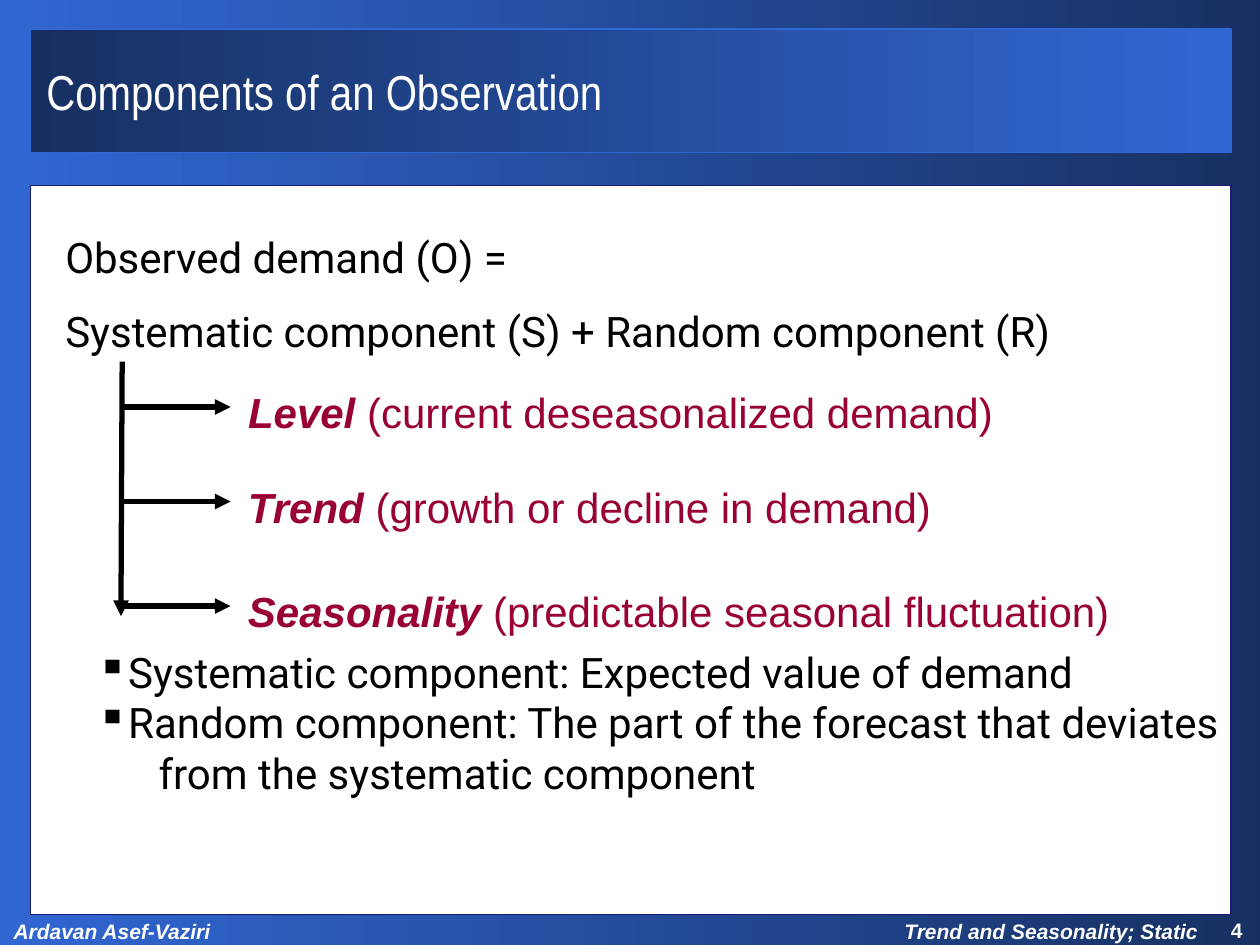
from dataclasses import dataclass

from lxml import etree
from pptx import Presentation
from pptx.dml.color import RGBColor
from pptx.enum.shapes import MSO_CONNECTOR, MSO_SHAPE
from pptx.enum.text import MSO_ANCHOR
from pptx.oxml.ns import qn
from pptx.util import Inches, Pt

RECT = MSO_SHAPE.RECTANGLE
STRAIGHT = MSO_CONNECTOR.STRAIGHT
TOP, MIDDLE = MSO_ANCHOR.TOP, MSO_ANCHOR.MIDDLE
WIDTH, HEIGHT = Inches(10), Inches(7.5)
COL, ROW = WIDTH / 100, HEIGHT / 75


@dataclass(frozen=True)
class Theme:
    """Colours, fonts and type sizes of the slide."""
    blue: str = "3167D3"
    navy: str = "173062"
    edge: str = "1A1A70"
    white: str = "FFFFFF"
    black: str = "000000"
    accent: str = "990033"
    sans: str = "Arial"
    narrow: str = "Arial Narrow"
    body: str = "Roboto"
    title_size: int = 28
    body_size: int = 24
    footer_size: int = 12


T = Theme()
TITLE = {"name": T.narrow, "size": T.title_size, "color": T.white}
BODY = {"name": T.body, "size": T.body_size, "color": T.black}
LABEL = {"name": T.sans, "size": T.body_size, "color": T.accent}
STRONG = {**LABEL, "bold": True, "italic": True}
PAGE = {"name": T.sans, "size": T.footer_size, "color": T.white, "bold": True}
FOOTER = {**PAGE, "italic": True}


def grid(x, y, w, h):
    """Turn columns and rows into slide lengths."""
    return [round(v) for v in (x * COL, y * ROW, w * COL, h * ROW)]


def add_panel(s, box, colors, edge):
    """Add a rectangle with a plain or a left-to-right gradient fill."""
    sp = s.shapes.add_shape(RECT, *grid(*box))
    sp.shadow.inherit = False
    if len(colors) == 1:
        sp.fill.solid()
        sp.fill.fore_color.rgb = RGBColor.from_string(colors[0])
    else:
        sp.fill.gradient()
        sp.fill.gradient_angle = 0
        for position, (stop, color) in enumerate(zip(sp.fill.gradient_stops, colors)):
            stop.position = position
            stop.color.rgb = RGBColor.from_string(color)
    sp.line.color.rgb = RGBColor.from_string(edge)
    sp.line.width = Pt(0.75)


def add_run(p, text, style):
    """Add a run and set its font from a style."""
    r = p.add_run()
    r.text = text
    values = {**style, "size": Pt(style["size"])}
    r.font.color.rgb = RGBColor.from_string(values.pop("color"))
    for key, value in values.items():
        setattr(r.font, key, value)


def add_text(s, box, paragraphs, anchor=TOP, wrap=True):
    """Add a text box from lists of (text, style) runs and return its paragraphs."""
    tf = s.shapes.add_textbox(*grid(*box)).text_frame
    tf.word_wrap = wrap
    tf.vertical_anchor = anchor
    for i, runs in enumerate(paragraphs):
        p = tf.add_paragraph() if i else tf.paragraphs[0]
        for text, style in runs:
            add_run(p, text, style)
    return tf.paragraphs


def set_indent(p, margin, hang=0, bullet=None):
    """Set the left margin, the hanging indent and an optional bullet."""
    pPr = p._p.get_or_add_pPr()
    pPr.set("marL", str(round(margin * COL)))
    pPr.set("indent", str(round(-hang * COL)))
    if bullet:
        etree.SubElement(pPr, qn("a:buChar")).set("char", bullet)


def add_arrow(s, x1, y1, x2, y2):
    """Add a straight arrow between two grid points."""
    c = s.shapes.add_connector(STRAIGHT, *grid(x1, y1, x2, y2))
    c.line.color.rgb = RGBColor.from_string(T.black)
    c.line.width = Pt(3)
    etree.SubElement(c.line._get_or_add_ln(), qn("a:tailEnd")).set("type", "triangle")
    etree.SubElement(c._element.spPr, qn("a:effectLst"))


def add_frame(s):
    """Add the background, title band, content panel and footer."""
    add_panel(s, (0, -0.7, 101, 76.2), (T.blue, T.navy), T.blue)
    add_panel(s, (2.4, 2.3, 95.3, 9.8), (T.navy, T.blue), T.blue)
    add_panel(s, (2.4, 14.7, 95.3, 57.9), (T.white,), T.edge)
    add_text(s, (70.8, 72.4, 26, 3), [[("Trend and Seasonality; Static", FOOTER)]])
    add_text(s, (96.7, 72.3, 4, 3), [[("4", PAGE)]], wrap=False)
    add_text(s, (0.1, 72.4, 25.6, 3), [[("Ardavan Asef-Vaziri", FOOTER)]])
    add_text(s, (2.7, 2.5, 94.9, 9.4), [[("Components of an Observation", TITLE)]], MIDDLE)


def add_equation(s):
    """Add the two lines that define observed demand."""
    lines = ("Observed demand (O) =", "Systematic component (S) + Random component (R)")
    for i, p in enumerate(add_text(s, (4.2, 16.7, 91.7, 53.6), [[(t, BODY)] for t in lines])):
        set_indent(p, 3.8, 3.8)
        p.line_spacing = 1.3
        p.space_before = Pt(5 if i else 0)


def add_branches(s):
    """Add the arrow tree of the systematic component with its labels."""
    branches = (
        (32.3, 71.5, "Level", " (current deseasonalized demand)"),
        (39.8, 59.7, "Trend", " (growth or decline in demand)"),
        (48.1, 72.7, "Seasonality", " (predictable seasonal fluctuation)"),
    )
    for y, width, term, meaning in branches:
        add_arrow(s, 9.7, y, 18.3, y)
        add_text(s, (18.7, y - 2.1, width, 5), [[(term, STRONG), (meaning, LABEL)]])
    add_arrow(s, 9.7, 28.7, 9.6, 48.9)


def add_definitions(s):
    """Add the bulleted definitions of both components."""
    lines = (
        ("Systematic component: Expected value of demand", 2.4, 2.4, "▪"),
        ("Random component: The part of the forecast that deviates", 2.4, 2.4, "▪"),
        ("from the systematic component", 4.9, 0, None),
    )
    paragraphs = add_text(s, (6.7, 50.8, 91.1, 13.1), [[(t[0], BODY)] for t in lines], wrap=False)
    for p, (_, margin, hang, bullet) in zip(paragraphs, lines):
        set_indent(p, margin, hang, bullet)


def main():
    """Build the slide and save it."""
    prs = Presentation()
    prs.slide_width, prs.slide_height = WIDTH, HEIGHT
    s = prs.slides.add_slide(prs.slide_layouts[6])
    add_frame(s)
    add_equation(s)
    add_branches(s)
    add_definitions(s)
    prs.save("out.pptx")


if __name__ == "__main__":
    main()
